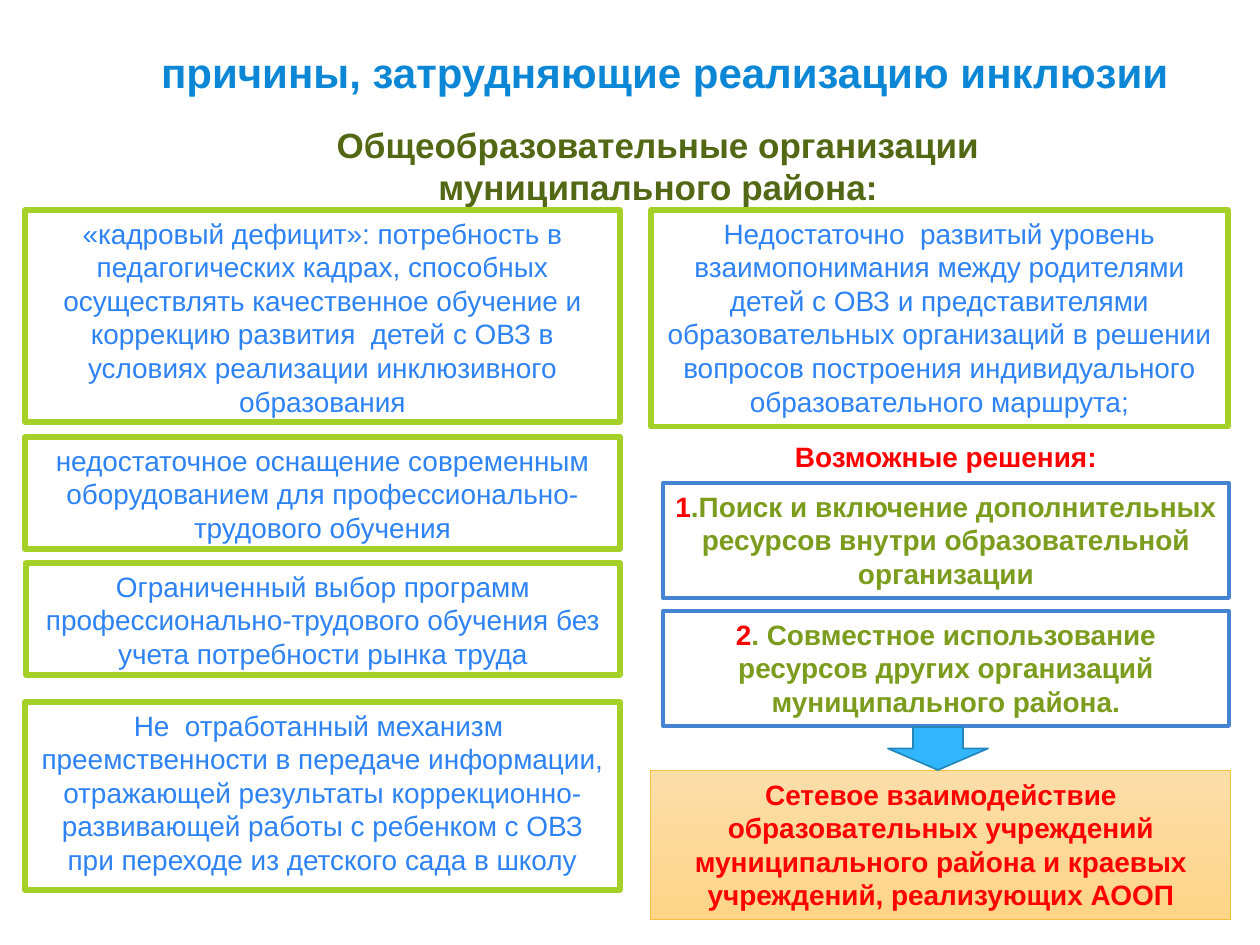
from dataclasses import dataclass
from typing import Optional

from pptx import Presentation
from pptx.dml.color import RGBColor
from pptx.enum.shapes import MSO_SHAPE
from pptx.enum.text import MSO_ANCHOR, MSO_AUTO_SIZE, PP_ALIGN
from pptx.util import Emu, Pt

EMU_PER_PX = 914400 / 126
FONT = "Arial"
BLUE, GREEN, RED = "2D83F4", "A5D028", "FF0000"
OLIVE, DARK_OLIVE, FRAME_BLUE = "7C9C1E", "526814", "4584D3"


@dataclass(frozen=True)
class Span:
    text: str
    color: str
    size: int = 16
    bold: bool = True


@dataclass(frozen=True)
class Card:
    area: tuple[int, int, int, int]
    spans: list[Span]
    line: str
    line_width: float
    gradient: Optional[tuple[str, str]] = None


def px(value: int) -> Emu:
    return Emu(round(value * EMU_PER_PX))


def rgb(color: str) -> RGBColor:
    return RGBColor.from_string(color)


def write(shape, paragraphs: list[list[Span]], anchor=MSO_ANCHOR.TOP,
          grow: bool = True, spacing: float = 1.0) -> None:
    frame = shape.text_frame
    frame.word_wrap = True
    frame.vertical_anchor = anchor
    frame.auto_size = MSO_AUTO_SIZE.SHAPE_TO_FIT_TEXT if grow else MSO_AUTO_SIZE.NONE
    for index, spans in enumerate(paragraphs):
        para = frame.add_paragraph() if index else frame.paragraphs[0]
        para.alignment = PP_ALIGN.CENTER
        para.line_spacing = spacing
        for span in spans:
            run = para.add_run()
            run.text = span.text
            run.font.name = FONT
            run.font.size = Pt(span.size)
            run.font.bold = span.bold
            run.font.color.rgb = rgb(span.color)


def add_text(page, area: tuple[int, int, int, int], paragraphs: list[list[Span]], **options) -> None:
    box = page.shapes.add_textbox(*map(px, area))
    write(box, paragraphs, **options)


def add_outlined(page, kind, area: tuple[int, int, int, int], fill: str, line: str, width: float):
    shape = page.shapes.add_shape(kind, *map(px, area))
    shape.shadow.inherit = False
    shape.fill.solid()
    shape.fill.fore_color.rgb = rgb(fill)
    shape.line.color.rgb = rgb(line)
    shape.line.width = Pt(width)
    return shape


def add_card(page, card: Card) -> None:
    shape = add_outlined(page, MSO_SHAPE.RECTANGLE, card.area, "FFFFFF", card.line, card.line_width)
    if card.gradient:
        shape.fill.gradient()
        shape.fill.gradient_angle = 270
        for stop, color in zip(shape.fill.gradient_stops, card.gradient):
            stop.color.rgb = rgb(color)
    write(shape, [card.spans])


def reason(area: tuple[int, int, int, int], text: str) -> Card:
    return Card(area, [Span(text, BLUE, bold=False)], GREEN, 3)


def solution(top: int, number: str, text: str) -> Card:
    return Card((663, top, 566, 115), [Span(number, RED), Span(text, OLIVE)], FRAME_BLUE, 2.25)


CARDS = [
    reason((25, 210, 595, 212),
           "«кадровый дефицит»: потребность в педагогических кадрах, способных "
           "осуществлять качественное обучение и коррекцию развития  детей с ОВЗ "
           "в условиях реализации инклюзивного образования"),
    reason((25, 437, 595, 112),
           "недостаточное оснащение современным оборудованием для "
           "профессионально-трудового обучения"),
    reason((26, 563, 594, 112),
           "Ограниченный выбор программ профессионально-трудового обучения "
           "без учета потребности рынка труда"),
    reason((25, 702, 595, 188),
           "Не  отработанный механизм  преемственности в передаче информации, "
           "отражающей результаты коррекционно-развивающей работы с ребенком "
           "с ОВЗ при переходе из детского сада в школу"),
    reason((651, 210, 577, 217),
           "Недостаточно  развитый уровень взаимопонимания между родителями детей "
           "с ОВЗ и представителями образовательных организаций в решении вопросов "
           "построения индивидуального образовательного маршрута;"),
    solution(483, "1", ".Поиск и включение дополнительных ресурсов внутри "
                       "образовательной организации"),
    solution(611, "2", ". Совместное использование ресурсов других организаций "
                       "муниципального района."),
    Card((651, 771, 580, 149),
         [Span("Сетевое взаимодействие образовательных учреждений муниципального "
               "района и краевых учреждений, реализующих АООП", RED)],
         "F5C040", 0.5, ("FCDEA9", "FED487")),
]


def main() -> None:
    deck = Presentation()
    deck.slide_width, deck.slide_height = px(1260), px(945)
    page = deck.slides.add_slide(deck.slide_layouts[6])

    add_text(page, (93, 23, 1134, 103),
             [[Span(" ", "0B87D6", 20, False),
               Span("причины, затрудняющие реализацию инклюзии", "0B87D6", 24)]],
             anchor=MSO_ANCHOR.MIDDLE, grow=False, spacing=0.9)
    add_text(page, (82, 117, 1162, 97),
             [[Span("Общеобразовательные организации ", DARK_OLIVE, 20)],
              [Span("муниципального района: ", DARK_OLIVE, 20)]],
             anchor=MSO_ANCHOR.MIDDLE)
    add_text(page, (663, 433, 566, 47), [[Span("Возможные решения:", RED)]])

    for card in CARDS:
        add_card(page, card)
    add_outlined(page, MSO_SHAPE.DOWN_ARROW, (888, 727, 100, 43), "31B6FD", "2487BB", 1)

    deck.save("out.pptx")


if __name__ == "__main__":
    main()
